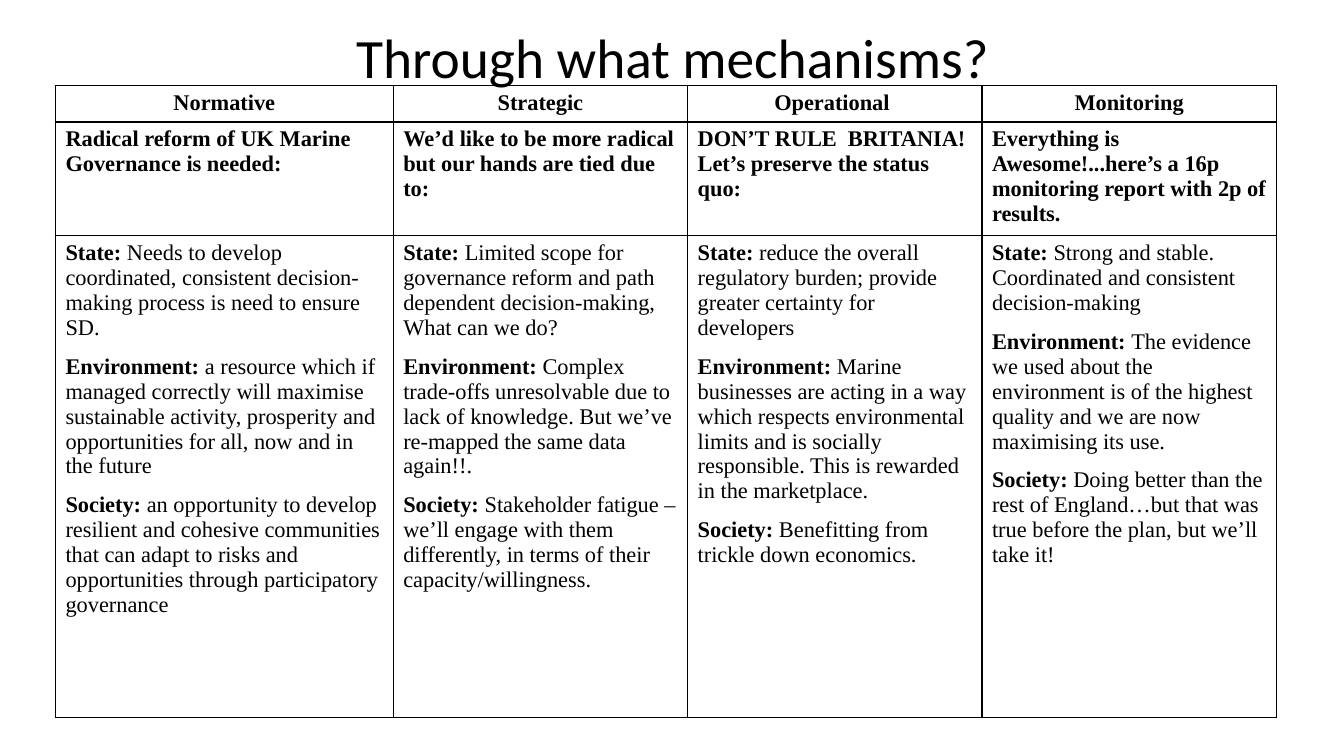
from lxml import etree
from pptx import Presentation
from pptx.dml.color import RGBColor
from pptx.enum import text
from pptx.oxml import ns
from pptx.util import Inches, Pt


def color(value):
    return RGBColor.from_string(value)


def add_run(paragraph, words, size, name, bold):
    run = paragraph.add_run()
    run.text = words
    formats = {"size": Pt(size), "name": name, "bold": bold}
    for key, value in formats.items():
        setattr(run.font, key, value)
    run.font.color.rgb = color("000000")


mechanisms = [
    (
        "Normative",
        "Radical reform of UK Marine Governance is needed:",
        [
            "Needs to develop coordinated, consistent decision-making process is need to ensure SD.",
            "a resource which if managed correctly will maximise sustainable activity, "
            "prosperity and opportunities for all, now and in the future",
            "an opportunity to develop resilient and cohesive communities that can adapt "
            "to risks and opportunities through participatory governance",
        ],
    ),
    (
        "Strategic",
        "We’d like to be more radical but our hands are tied due to:",
        [
            "Limited scope for governance reform and path dependent decision-making, What can we do?",
            "Complex trade-offs unresolvable due to lack of knowledge. "
            "But we’ve re-mapped the same data again!!.",
            "Stakeholder fatigue – we’ll engage with them differently, "
            "in terms of their capacity/willingness.",
        ],
    ),
    (
        "Operational ",
        "DON’T RULE  BRITANIA! Let’s preserve the status quo:",
        [
            "reduce the overall regulatory burden; provide greater certainty for developers",
            "Marine businesses are acting in a way which respects environmental limits "
            "and is socially responsible. This is rewarded in the marketplace.",
            "Benefitting from trickle down economics.",
        ],
    ),
    (
        "Monitoring",
        "Everything is Awesome!...here’s a 16p monitoring report with 2p of results.",
        [
            "Strong and stable. Coordinated and consistent decision-making",
            "The evidence we used about the environment is of the highest quality "
            "and we are now maximising its use.",
            "Doing better than the rest of England…but that was true before the plan, "
            "but we’ll take it!",
        ],
    ),
]
themes = ["State: ", "Environment: ", "Society: "]
column_widths = [3.35, 2.92, 2.92, 2.92]
row_heights = [0.36, 1.13, 4.78]

deck = Presentation()
deck.slide_width, deck.slide_height = Inches(13.33), Inches(7.5)
slide = deck.slides.add_slide(deck.slide_layouts[5])

heading = slide.shapes.title
heading_place = {"left": 0.67, "top": 0.3, "width": 12, "height": 0.51}
for key, value in heading_place.items():
    setattr(heading, key, Inches(value))
heading.text_frame.auto_size = text.MSO_AUTO_SIZE.NONE
heading.text_frame.vertical_anchor = text.MSO_ANCHOR.MIDDLE
heading_line = heading.text_frame.paragraphs[0]
heading_line.alignment = text.PP_ALIGN.CENTER
add_run(heading_line, "Through what mechanisms?", 39.6, "Calibri", False)

grid = slide.shapes.add_table(
    len(row_heights), len(mechanisms), Inches(0.55), Inches(0.85),
    Inches(sum(column_widths)), Inches(sum(row_heights)),
).table
grid.first_row = False
grid.horz_banding = False
for row, height in zip(grid.rows, row_heights):
    row.height = Inches(height)

for index, (name, stance, views) in enumerate(mechanisms):
    grid.columns[index].width = Inches(column_widths[index])
    contents = [
        [(name, "")],
        [(stance, "")],
        list(zip(themes, views)),
    ]
    for level, entries in enumerate(contents):
        cell = grid.cell(level, index)
        properties = cell._tc.get_or_add_tcPr()
        for side in ("a:lnL", "a:lnR", "a:lnT", "a:lnB"):
            border = etree.SubElement(properties, ns.qn(side), w=str(Pt(1)))
            paint = etree.SubElement(border, ns.qn("a:solidFill"))
            etree.SubElement(paint, ns.qn("a:srgbClr"), val="000000")
        cell.fill.background()
        for order, (lead, detail) in enumerate(entries):
            frame = cell.text_frame
            paragraph = frame.add_paragraph() if order else frame.paragraphs[0]
            paragraph.space_after = Pt(10)
            paragraph.alignment = text.PP_ALIGN.LEFT if level else text.PP_ALIGN.CENTER
            add_run(paragraph, lead, 16, "Times New Roman", True)
            if detail:
                add_run(paragraph, detail, 16, "Times New Roman", False)

deck.save("out.pptx")
